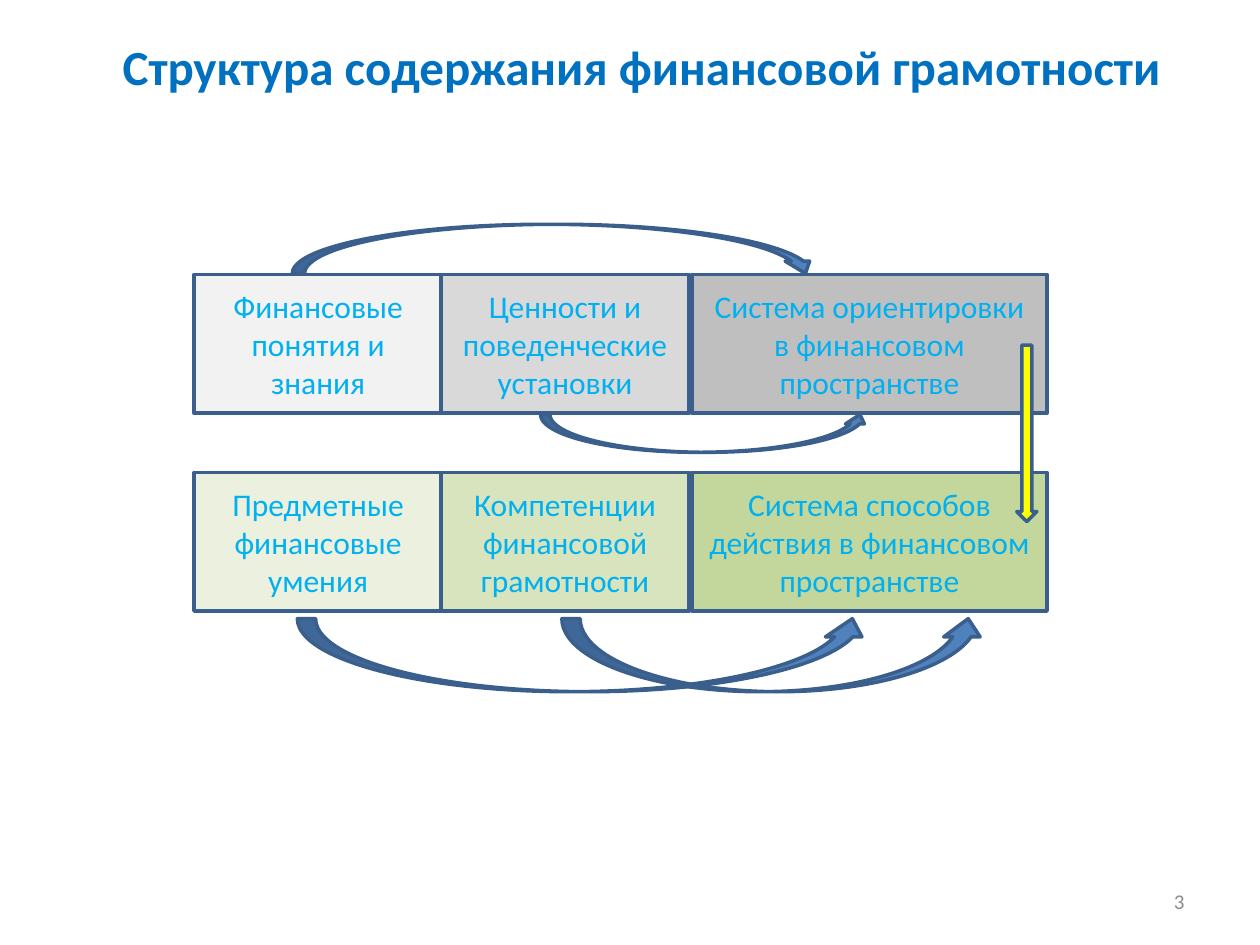
from pptx import Presentation
from pptx import util as u
from pptx.dml import color
from pptx.enum import shapes, text

Inches = u.Inches
Shape = shapes.MSO_SHAPE
Align = text.PP_ALIGN

COLORS = {
    "title": "0070C0", "number": "8C8C8C", "label": "00B0F0",
    "outline": "3A5F8C", "link": "4F81BD", "step": "FFFF00",
}
COLUMNS = [(0, 1.97), (1.96, 1.97), (3.95, 2.82)]  # left offset, width
ROW_HEIGHT = 1.1
ROWS = [
    (0, [("Финансовые понятия и знания", "F2F2F2"),
         ("Ценности и поведенческие установки", "D9D9D9"),
         ("Система ориентировки в финансовом пространстве", "BFBFBF")]),
    (1.57, [("Предметные финансовые умения", "EBF1DE"),
            ("Компетенции финансовой грамотности", "D7E4BD"),
            ("Система способов действия в финансовом пространстве", "C3D69B")]),
]
ARROWS = [  # preset, offset and size within the diagram, fill
    (Shape.DOWN_ARROW, (6.53, 0.56, 0.16, 1.4), "step"),
    (Shape.CURVED_DOWN_ARROW, (0.78, -0.4, 4.17, 0.39), "link"),
    (Shape.CURVED_UP_ARROW, (2.75, 1.11, 2.61, 0.3), "link"),
    (Shape.CURVED_UP_ARROW, (0.82, 2.73, 4.55, 0.58), "link"),
    (Shape.CURVED_UP_ARROW, (2.92, 2.73, 3.37, 0.58), "link"),
]


def rgb(value):
    return color.RGBColor.from_string(value)


def write(shape, words, size, ink, align=Align.CENTER, bold=False):
    frame = shape.text_frame
    frame.word_wrap = True
    frame.vertical_anchor = text.MSO_ANCHOR.MIDDLE
    para = frame.paragraphs[0]
    para.alignment = align
    span = para.add_run()
    span.text = words
    span.font.name = "Calibri"
    span.font.size = u.Pt(size)
    span.font.bold = bold
    span.font.color.rgb = rgb(ink)


def add_label(page, box, words, **style):
    write(page.shapes.add_textbox(*map(Inches, box)), words, **style)


def add_block(page, preset, box, fill):
    """Add a filled preset shape with the common outline."""
    block = page.shapes.add_shape(preset, *map(Inches, box))
    block.shadow.inherit = False
    block.fill.solid()
    block.fill.fore_color.rgb = rgb(fill)
    block.line.color.rgb = rgb(COLORS["outline"])
    block.line.width = u.Pt(2)
    return block


def add_diagram(page, left, top):
    """Place both rows of cells, then the arrows that link them."""
    for row_top, cells in ROWS:
        for (offset, width), (words, fill) in zip(COLUMNS, cells):
            box = (left + offset, top + row_top, width, ROW_HEIGHT)
            cell = add_block(page, Shape.RECTANGLE, box, fill)
            write(cell, words, size=18, ink=COLORS["label"])
    for preset, (x, y, width, height), fill in ARROWS:
        add_block(page, preset, (left + x, top + y, width, height), COLORS[fill])


def main():
    deck = Presentation()
    deck.slide_width, deck.slide_height = Inches(10), Inches(7.5)
    page = deck.slides.add_slide(deck.slide_layouts[6])
    add_label(page, (0.59, 0.22, 9, 0.61), "Структура содержания финансовой грамотности",
              size=28, ink=COLORS["title"], bold=True)
    add_label(page, (7.17, 6.95, 2.33, 0.4), "3",
              size=12, ink=COLORS["number"], align=Align.RIGHT)
    add_diagram(page, 1.54, 2.18)
    deck.save("out.pptx")


if __name__ == "__main__":
    main()
